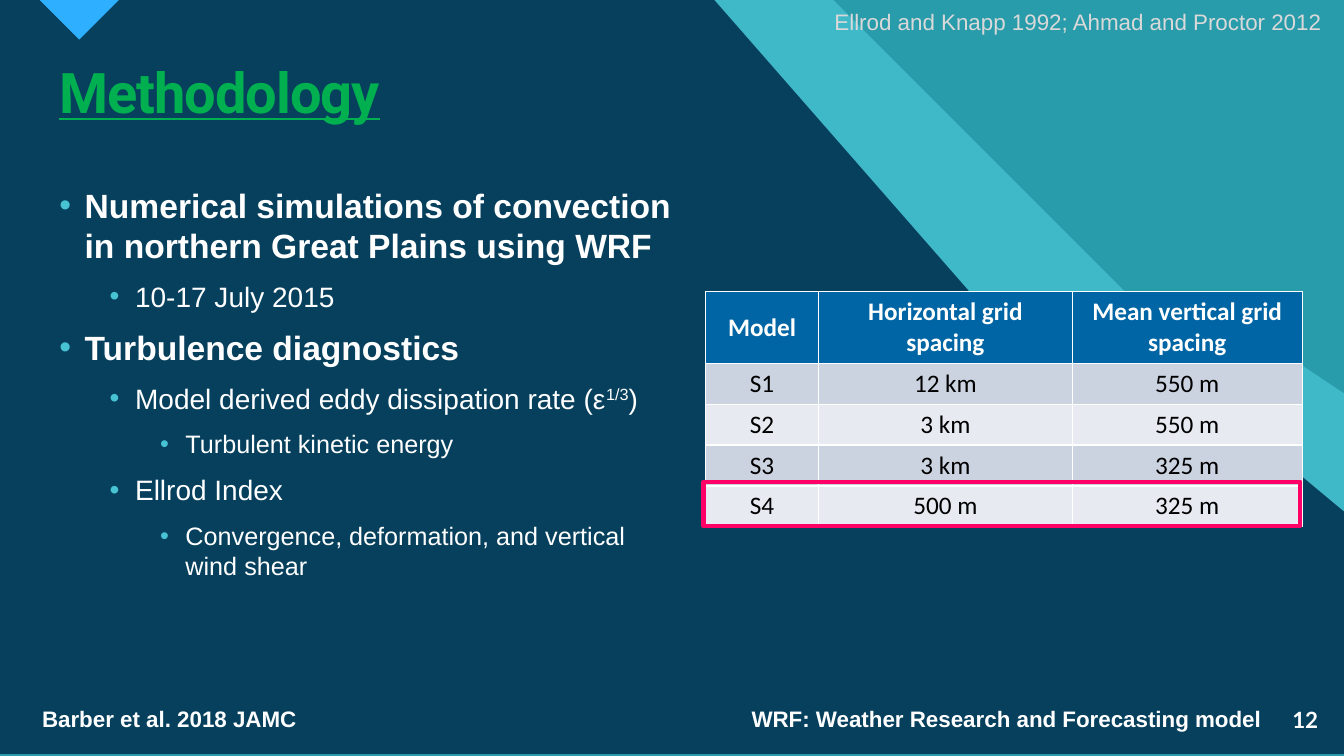
from dataclasses import dataclass

from lxml.etree import SubElement
from pptx import Presentation
from pptx.dml.color import RGBColor as Rgb
from pptx.enum.shapes import MSO_SHAPE as Shape
from pptx.enum.text import MSO_ANCHOR as Anchor, MSO_AUTO_SIZE as Fit, PP_ALIGN as Align
from pptx.oxml.ns import qn
from pptx.util import Cm, Pt


@dataclass(frozen=True)
class Theme:
    teal: str = "299CAB"
    aqua: str = "47C3D3"
    navy: str = "003352"
    blue: str = "2FAFFF"
    green: str = "00B050"
    white: str = "FFFFFF"
    black: str = "000000"
    grey: str = "D9D9D9"
    pink: str = "FF0066"
    head: str = "0065A4"
    bands: tuple = ("CCD3E0", "E7EAF0")
    title: int = 40
    levels: tuple = (24, 20, 18)
    cell: int = 18
    note: int = 16


T = Theme()


def add_run(par, text, size, font, color, bold=False):
    run = par.add_run()
    run.text = text
    run.font.size = Pt(size)
    run.font.name = font
    run.font.bold = bold
    run.font.color.rgb = Rgb.from_string(color)
    return run


def add_area(points, color, alpha=100):
    """Draw a closed, unlined area; points are in cm, alpha in percent."""
    pen = slide.shapes.build_freeform(*points[0], scale=Cm(1))
    pen.add_line_segments(points[1:], close=True)
    area = pen.convert_to_shape()
    area.shadow.inherit = False
    area.line.fill.background()
    area.fill.solid()
    area.fill.fore_color.rgb = Rgb.from_string(color)
    if alpha < 100:
        tint = area._element.spPr.find(qn("a:solidFill"))[0]
        SubElement(tint, qn("a:alpha"), val=str(alpha * 1000))


W, H = 33.87, 19.05
deck = Presentation()
deck.slide_width, deck.slide_height = Cm(W), Cm(H)
slide = deck.slides.add_slide(deck.slide_layouts[1])
title, body = slide.placeholders

# Background
back = slide.background.fill
back.solid()
back.fore_color.rgb = Rgb.from_string(T.teal)

# Each band runs down at 45 degrees, with one level step
step = 7.55
for top, turn, color, alpha in ((20.96, 31.34, T.aqua, 74), (17.65, 28.4, T.navy, 90)):
    add_area([(0, 0), (top, 0), (top + step, step), (turn, step),
              (W, step + W - turn), (W, H), (0, H)], color, alpha)

for left, deep, color in ((1.22, 1.05, T.navy), (0.94, 1.02, T.blue)):
    add_area([(left, 0), (left + deep, deep), (left + 2 * deep, 0)], color)

# Title and list, brought in front of the background
for holder, box in ((title, (1.24, 1.5, 31.14, 1.8)), (body, (1.24, 4.52, 15.95, 11.38))):
    slide.shapes._spTree.append(holder._element)
    holder.left, holder.top, holder.width, holder.height = map(Cm, box)
    holder.text_frame.auto_size = Fit.NONE

title.text_frame.vertical_anchor = Anchor.MIDDLE
par = title.text_frame.paragraphs[0]
par.alignment = Align.LEFT
par.line_spacing = 0.9
run = add_run(par, "Methodology", T.title, "Roboto", T.green, True)
run.font.underline = True
run.font._element.set("spc", "-70")

points = (
    (0, ["Numerical simulations of convection in northern Great Plains using WRF"]),
    (1, ["10-17 July 2015"]),
    (0, ["Turbulence diagnostics"]),
    (1, ["Model derived eddy dissipation rate (ε", "1/3", ")"]),
    (2, ["Turbulent kinetic energy"]),
    (1, ["Ellrod Index"]),
    (2, ["Convergence, deformation, and vertical wind shear"]),
)
frame = body.text_frame
for i, (level, parts) in enumerate(points):
    par = frame.add_paragraph() if i else frame.paragraphs[0]
    par.level = level
    par.space_before, par.space_after = Pt(6), Pt(4)
    props = par._p.get_or_add_pPr()
    props.set("marL", str(Cm(0.64 + 1.27 * level)))
    props.set("indent", str(Cm(-0.64)))
    tint = SubElement(props, qn("a:buClr"))
    SubElement(tint, qn("a:srgbClr"), val=T.aqua)
    SubElement(props, qn("a:buFont"), typeface="Arial")
    SubElement(props, qn("a:buChar"), char="•")
    for part in parts:
        run = add_run(par, part, T.levels[level], "Arial", T.white, level == 0)
        if part == "1/3":
            run.font._element.set("baseline", "30000")

# Model table
rows = (
    ("Model", "Horizontal grid spacing", "Mean vertical grid spacing"),
    ("S1", "12 km", "550 m"),
    ("S2", "3 km", "550 m"),
    ("S3", "3 km", "325 m"),
    ("S4", "500 m", "325 m"),
)
grid = slide.shapes.add_table(5, 3, Cm(17.78), Cm(7.35), Cm(15.04), Cm(5.9)).table
for col, width in zip(grid.columns, (2.85, 6.39, 5.8)):
    col.width = Cm(width)
for r, row in enumerate(rows):
    grid.rows[r].height = Cm(1.03 if r else 1.78)
    for c, text in enumerate(row):
        cell = grid.cell(r, c)
        cell.fill.solid()
        cell.fill.fore_color.rgb = Rgb.from_string(T.bands[(r - 1) % 2] if r else T.head)
        cell.vertical_anchor = Anchor.TOP if r else Anchor.MIDDLE
        par = cell.text_frame.paragraphs[0]
        par.alignment = Align.CENTER
        add_run(par, text, T.cell, "Calibri", T.black if r else T.white, r == 0)

# Notes and page number
notes = (
    ("12", (31.29, 17.63, 2.18, 1.02), "Lato", T.white, True, Align.RIGHT),
    ("Ellrod and Knapp 1992; Ahmad and Proctor 2012",
     (20.78, 0.08, 13.09, 0.94), "Arial", T.grey, False, Align.LEFT),
    ("Barber et al. 2018 JAMC",
     (0.81, 17.63, 13.69, 0.94), "Arial", T.white, True, Align.LEFT),
    ("WRF: Weather Research and Forecasting model",
     (18.69, 17.63, 13.69, 0.94), "Arial", T.white, True, Align.LEFT),
)
for text, box, font, color, bold, align in notes:
    frame = slide.shapes.add_textbox(*map(Cm, box)).text_frame
    frame.word_wrap = True
    frame.vertical_anchor = Anchor.MIDDLE
    par = frame.paragraphs[0]
    par.alignment = align
    add_run(par, text, T.note, font, color, bold)

# Frame around the last model
mark = slide.shapes.add_shape(Shape.RECTANGLE, Cm(17.73), Cm(12.14), Cm(15.04), Cm(1.12))
mark.shadow.inherit = False
mark.fill.background()
mark.line.color.rgb = Rgb.from_string(T.pink)
mark.line.width = Pt(3)

deck.save("out.pptx")
